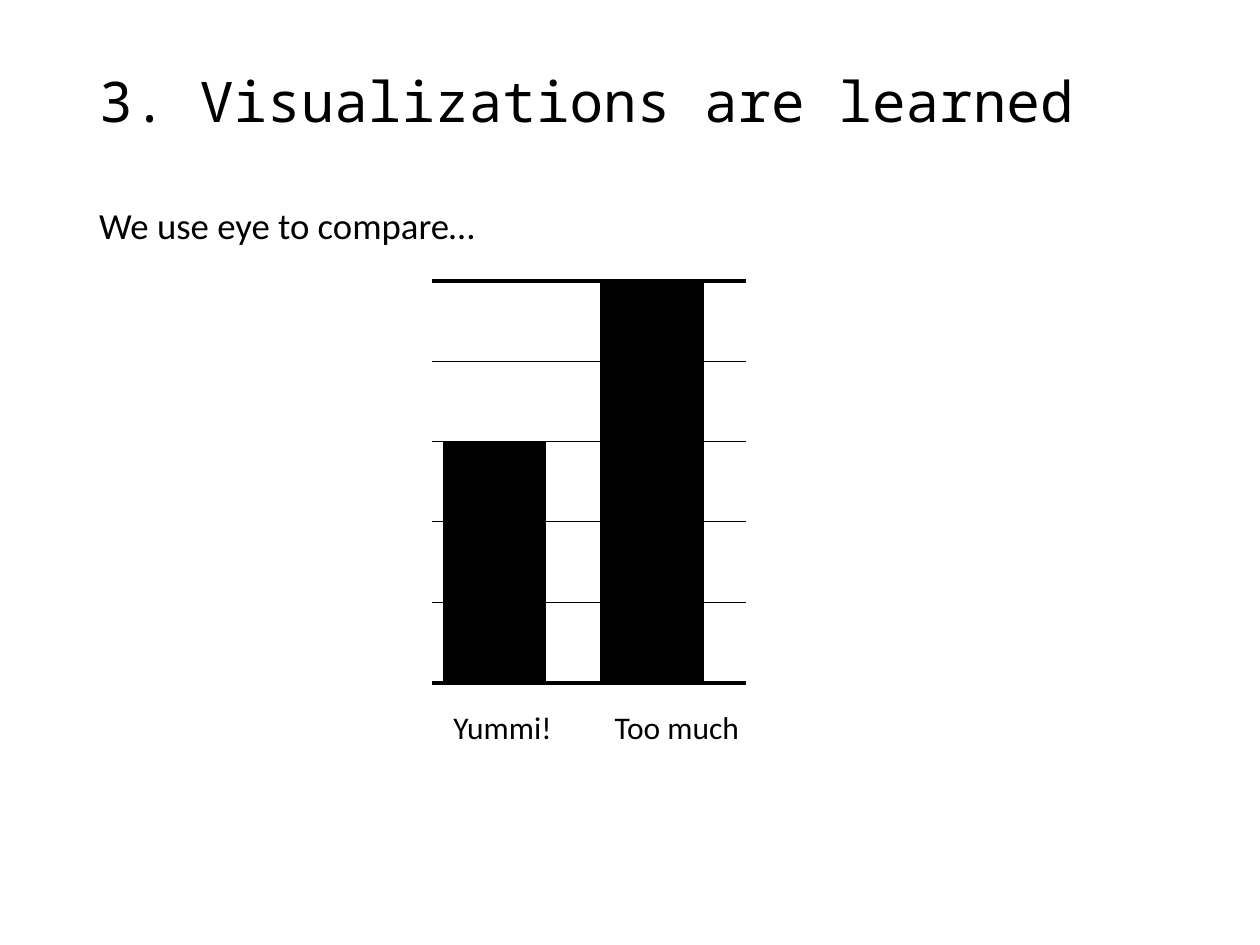
import pptx
import pptx.dml.color
import pptx.enum.shapes
import pptx.enum.text
import pptx.util
from lxml import etree
from pptx.oxml.ns import qn
from pptx.util import Cm

BLACK = "000000"
GRID_LEFT, GRID_RIGHT = 8.71, 15.04
BASELINE, GRID_STEP, GRID_COUNT = 13.76, 1.62, 5
BAR_WIDTH = 2.06


def color(value):
    return pptx.dml.color.RGBColor.from_string(value)


def level(step):
    """Height on the slide, in cm, of a grid step above the baseline."""
    return BASELINE - step * GRID_STEP


def add_text(slide, text, left, top, width, height, *, size,
             font="Calibri", spacing=1.0):
    box = slide.shapes.add_textbox(Cm(left), Cm(top), Cm(width), Cm(height))
    frame = box.text_frame
    frame.word_wrap = True
    frame.vertical_anchor = pptx.enum.text.MSO_ANCHOR.TOP
    paragraph = frame.paragraphs[0]
    paragraph.line_spacing = spacing
    run = paragraph.add_run()
    run.text = text
    run.font.name = font
    run.font.size = pptx.util.Pt(size)
    run.font.color.rgb = color(BLACK)


def add_grid_line(slide, step, weight):
    line = slide.shapes.add_connector(
        pptx.enum.shapes.MSO_CONNECTOR.STRAIGHT,
        Cm(GRID_LEFT), Cm(level(step)), Cm(GRID_RIGHT), Cm(level(step)))
    line.line.color.rgb = color(BLACK)
    line.line.width = pptx.util.Pt(weight)
    etree.SubElement(line._element.spPr, qn("a:effectLst"))


def add_bar(slide, left, value):
    bar = slide.shapes.add_shape(
        pptx.enum.shapes.MSO_SHAPE.RECTANGLE,
        Cm(left), Cm(level(value)), Cm(BAR_WIDTH), Cm(value * GRID_STEP))
    bar.shadow.inherit = False
    bar.fill.solid()
    bar.fill.fore_color.rgb = color(BLACK)
    bar.line.color.rgb = color(BLACK)
    bar.line.width = pptx.util.Pt(1)


def main():
    presentation = pptx.Presentation()
    presentation.slide_width = Cm(25.4)
    presentation.slide_height = Cm(19.05)
    slide = presentation.slides.add_slide(presentation.slide_layouts[6])

    # Title
    add_text(slide, "3. Visualizations are learned", 1.75, 1.37, 21.9, 1.83,
             size=32, font="Noto Sans Mono", spacing=0.9)

    # Grid, with heavy lines at the bottom and top
    for step in range(GRID_COUNT + 1):
        add_grid_line(slide, step, 2.25 if step in (0, GRID_COUNT) else 0.5)

    # Bars and their labels
    for label, label_left, bar_left, value in (
            ("Yummi!", 8.89, 8.94, 3), ("Too much", 12.14, 12.12, 5)):
        add_text(slide, label, label_left, 14.15, 3.05, 1.02, size=18)
        add_bar(slide, bar_left, value)

    # Body text
    add_text(slide, "We use eye to compare…", 1.75, 4.06, 21.9, 13.08,
             size=21, spacing=0.9)

    presentation.save("out.pptx")


if __name__ == "__main__":
    main()
